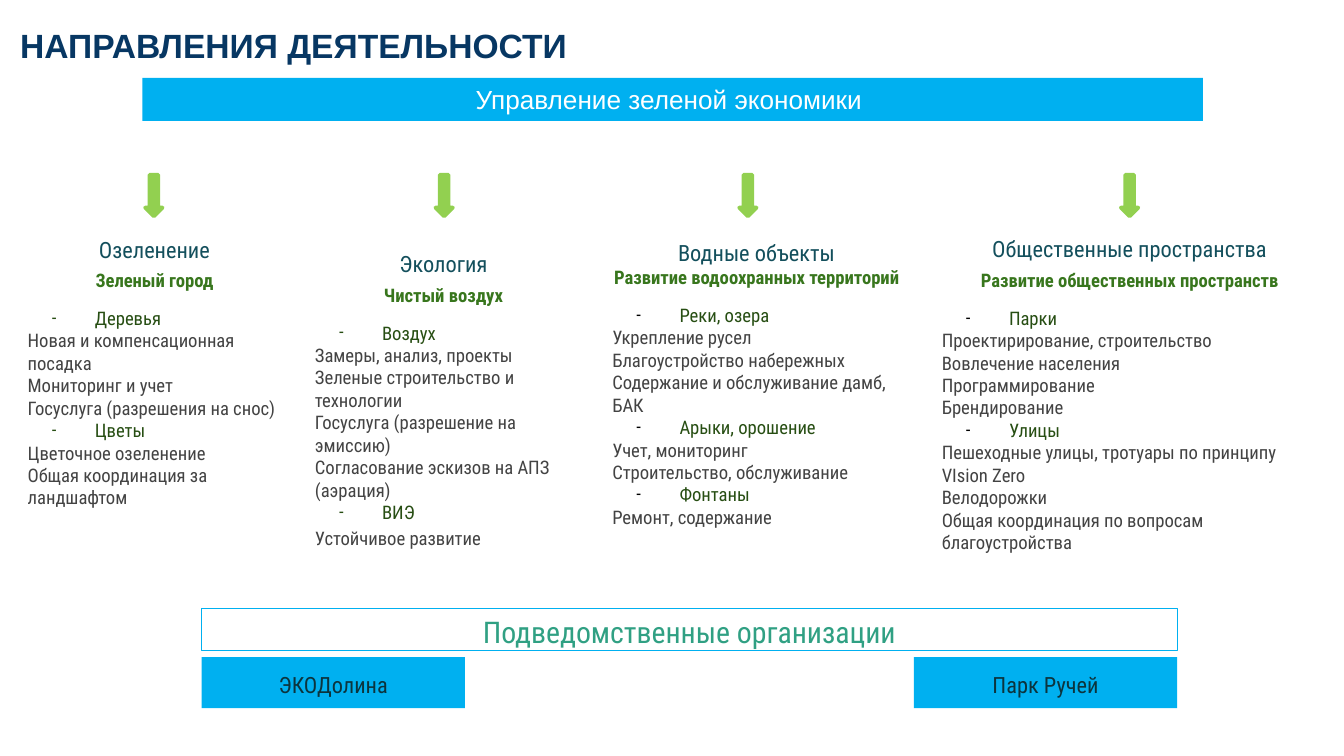
from pptx import Presentation
from pptx.dml.color import RGBColor
from pptx.enum.shapes import MSO_SHAPE
from pptx.enum.text import MSO_ANCHOR, MSO_AUTO_SIZE, PP_ALIGN
from pptx.oxml import parse_xml
from pptx.oxml.ns import nsdecls
from pptx.util import Inches, Pt

RECT, ROUND, DOWN = MSO_SHAPE.RECTANGLE, MSO_SHAPE.ROUNDED_RECTANGLE, MSO_SHAPE.DOWN_ARROW
TOP, MIDDLE = MSO_ANCHOR.TOP, MSO_ANCHOR.MIDDLE
LEFT, CENTER = PP_ALIGN.LEFT, PP_ALIGN.CENTER

THEME = {
    "sans": "Arial", "condensed": "Roboto Condensed",
    "white": "FFFFFF", "black": "000000", "navy": "073763", "blue": "00B0F0",
    "arrow": "92D050", "heading": "134F5C", "program": "38761D",
    "group": "274E13", "body": "434343", "unit": "0C343D", "teal": "30A083",
    "title_pt": 18, "section_pt": 16, "bar_pt": 14, "head_pt": 12, "body_pt": 10,
}

TITLE = "НАПРАВЛЕНИЯ ДЕЯТЕЛЬНОСТИ"
DEPARTMENT = "Управление зеленой экономики "
SECTION = "Подведомственные организации"
UNITS = ["ЭКОДолина", "Парк Ручей"]
COLUMNS = [
    {"box": (0.07, 1.6, 2.16, 2.34), "radius": 0.06, "arrow": 1.08, "dash": "group", "gap": 3.5,
     "head": "Озеленение", "program": "Зеленый город",
     "groups": [
         ("Деревья", ["Новая и компенсационная посадка", "Мониторинг и учет",
                      "Госуслуга (разрешения на снос)"]),
         ("Цветы", ["Цветочное озеленение", "Общая координация за ландшафтом"])]},
    {"box": (2.22, 1.66, 2.16, 2.63), "radius": 0.04, "arrow": 3.24, "dash": "group", "gap": 3.5,
     "last": (1.15, 16),
     "head": "Экология", "program": "Чистый воздух",
     "groups": [
         ("Воздух", ["Замеры, анализ, проекты", "Зеленые строительство и технологии",
                     "Госуслуга (разрешение на эмиссию)",
                     "Согласование эскизов на АПЗ (аэрация)"]),
         ("ВИЭ", ["Устойчивое развитие"])]},
    {"box": (4.43, 1.57, 2.4, 2.57), "radius": 0.04, "arrow": 5.5, "dash": "black", "gap": 0,
     "head": "Водные объекты", "program": "Развитие водоохранных территорий",
     "groups": [
         ("Реки, озера", ["Укрепление русел", "Благоустройство набережных",
                          "Содержание и обслуживание дамб, БАК"]),
         ("Арыки, орошение", ["Учет, мониторинг", "Строительство, обслуживание"]),
         ("Фонтаны", ["Ремонт, содержание"])]},
    {"box": (6.88, 1.68, 3.05, 2.51), "radius": 0.04, "arrow": 8.34, "dash": "black", "gap": 3.5,
     "head": "Общественные пространства", "program": "Развитие общественных пространств",
     "groups": [
         ("Парки", ["Проектирирование, строительство", "Вовлечение населения",
                    "Программирование", "Брендирование"]),
         ("Улицы", ["Пешеходные улицы, тротуары по принципу \nVIsion Zero", "Велодорожки",
                    "Общая координация по вопросам благоустройства"])]},
]
GROUP_GAP = 8.2
ARROW_TOP, ARROW_W, ARROW_H = 1.3, 0.13, 0.31
SECTION_BOX = (1.5, 4.53, 7.26, 0.31)
UNIT_TOP, UNIT_W, UNIT_H = 4.89, 1.96, 0.38


def color(name):
    return RGBColor.from_string(THEME[name])


def set_frame(tf, anchor, inset=0.1):
    tf.word_wrap = True
    tf.auto_size = MSO_AUTO_SIZE.NONE
    tf.vertical_anchor = anchor
    tf.margin_left = tf.margin_right = Inches(0.1)
    tf.margin_top = tf.margin_bottom = Inches(inset)


def add_box(s, kind, box, fill=None, line=None, width=0.75):
    sp = s.shapes.add_shape(kind, *map(Inches, box))
    sp.shadow.inherit = False
    if fill:
        sp.fill.solid()
        sp.fill.fore_color.rgb = color(fill)
    else:
        sp.fill.background()
    if line:
        sp.line.color.rgb = color(line)
        sp.line.width = Pt(width)
    else:
        sp.line.fill.background()
    return sp


def write(tf, text, size, ink, font="condensed", bold=False, align=LEFT, before=0, spacing=1.0):
    """Fill the first paragraph if it is still empty, otherwise add one."""
    p = tf.paragraphs[-1]
    if p.runs:
        p = tf.add_paragraph()
    p.alignment, p.line_spacing = align, spacing
    p.space_before, p.space_after = Pt(before), Pt(0)
    for i, part in enumerate(text.split("\n")):
        if i:
            p.add_line_break()
        r = p.add_run()
        r.text = part
        r.font.name, r.font.size, r.font.bold = THEME[font], Pt(THEME[size]), bold
        r.font.color.rgb = color(ink)
    return p


def add_dash(p, ink):
    pPr = p._p.get_or_add_pPr()
    pPr.set("marL", str(Inches(0.5)))
    pPr.set("indent", str(Inches(-0.32)))
    ns = nsdecls("a")
    for xml in (f'<a:buClr {ns}><a:srgbClr val="{THEME[ink]}"/></a:buClr>',
                f'<a:buSzPts {ns} val="{THEME["body_pt"] * 100}"/>',
                f'<a:buFont {ns} typeface="{THEME["condensed"]}"/>',
                f'<a:buChar {ns} char="-"/>'):
        pPr.append(parse_xml(xml))


def add_column(s, col):
    sp = add_box(s, ROUND, col["box"])
    sp.adjustments[0] = col["radius"]
    tf = sp.text_frame
    set_frame(tf, MIDDLE)
    write(tf, col["head"], "head_pt", "heading", align=CENTER)
    write(tf, col["program"], "body_pt", "program", bold=True, align=CENTER, before=col["gap"])
    for i, (group, items) in enumerate(col["groups"]):
        p = write(tf, group, "body_pt", "group", before=0 if i else GROUP_GAP)
        add_dash(p, col["dash"])
        for item in items:
            p = write(tf, item, "body_pt", "body")
    if "last" in col:
        p.line_spacing, after = col["last"]
        p.space_after = Pt(after)


def main():
    prs = Presentation()
    prs.slide_width = Inches(10)
    prs.slide_height = prs.slide_width * 9 // 16
    s = prs.slides.add_slide(prs.slide_layouts[5])

    title = s.shapes.title
    title.left, title.top, title.width, title.height = map(Inches, (0.05, 0.08, 4.8, 0.47))
    title.fill.solid()
    title.fill.fore_color.rgb = color("white")
    set_frame(title.text_frame, MIDDLE)
    write(title.text_frame, TITLE, "title_pt", "navy", "sans", bold=True, spacing=1.15)

    for col in COLUMNS:
        add_column(s, col)

    bar = add_box(s, RECT, (1.06, 0.58, 7.89, 0.32), "blue")
    set_frame(bar.text_frame, MIDDLE, 0.05)
    write(bar.text_frame, DEPARTMENT, "bar_pt", "white", "sans", align=CENTER)

    left, _, width, _ = SECTION_BOX
    step = (width - UNIT_W) / (len(UNITS) - 1)
    for i, unit in enumerate(UNITS):
        sp = add_box(s, RECT, (left + i * step, UNIT_TOP, UNIT_W, UNIT_H), "blue")
        set_frame(sp.text_frame, TOP)
        write(sp.text_frame, unit, "head_pt", "unit", align=CENTER)

    for col in COLUMNS:
        add_box(s, DOWN, (col["arrow"], ARROW_TOP, ARROW_W, ARROW_H), "arrow", "arrow", 2)

    section = add_box(s, RECT, SECTION_BOX, line="blue")
    set_frame(section.text_frame, TOP)
    write(section.text_frame, SECTION, "section_pt", "teal", align=CENTER, spacing=0.75)

    prs.save("out.pptx")


if __name__ == "__main__":
    main()
